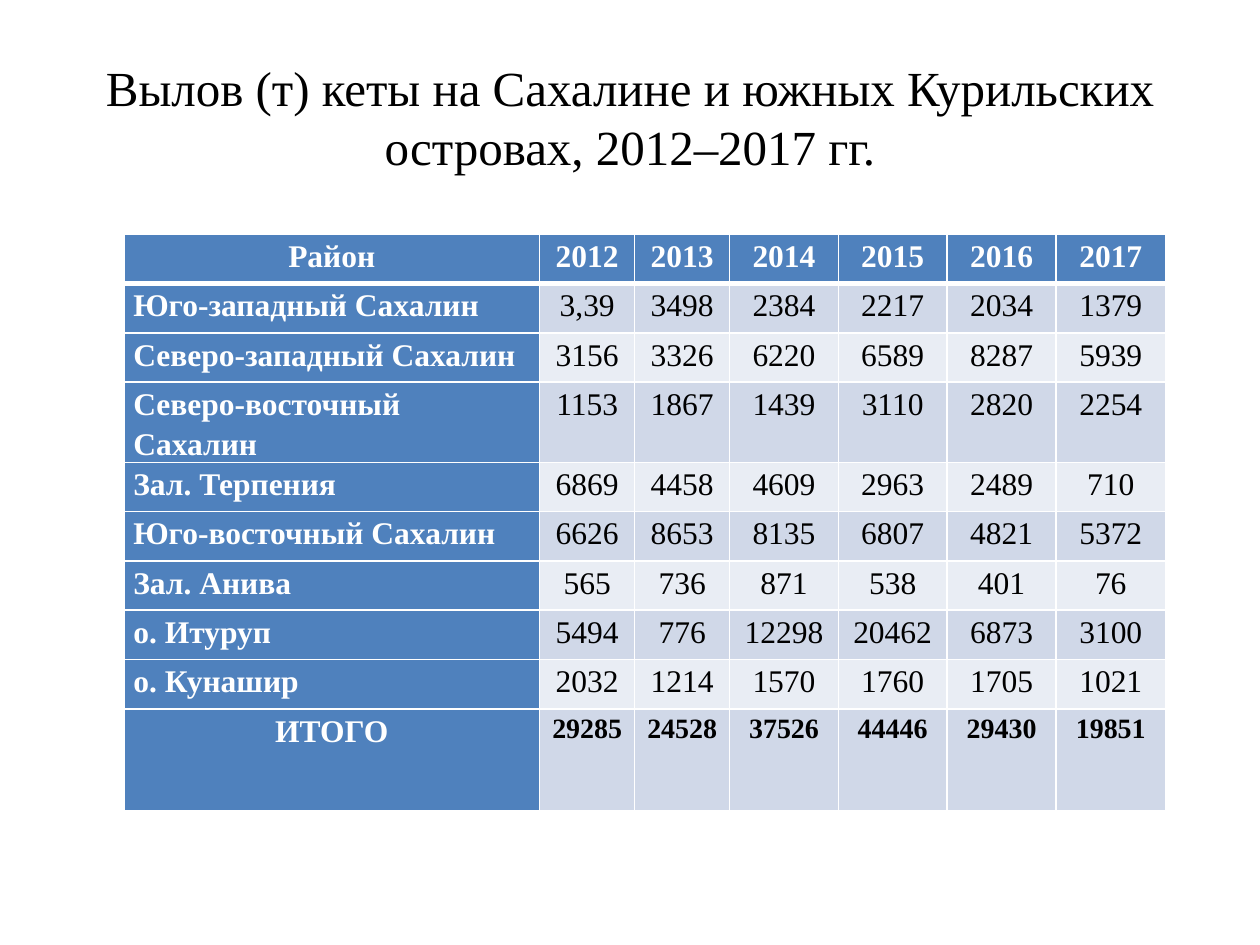
from typing import NamedTuple

from lxml.etree import SubElement
from pptx import Presentation
from pptx.dml.color import RGBColor
from pptx.enum.text import MSO_ANCHOR as Anchor, PP_ALIGN as Align
from pptx.oxml.ns import qn
from pptx.util import Emu, Pt

PX = 3810  # EMU in one px, 240 px to the inch
FONT = "Times New Roman"
WHITE = RGBColor(0xFF, 0xFF, 0xFF)
BLACK = RGBColor(0x00, 0x00, 0x00)
BLUE = RGBColor(0x4F, 0x81, 0xBD)
BAND_DARK = RGBColor(0xD0, 0xD8, 0xE8)
BAND_LIGHT = RGBColor(0xE9, 0xED, 0xF4)

TITLE = "Вылов (т) кеты на Сахалине и южных Курильских островах, 2012–2017 гг."
COLUMN_WIDTHS = [792] + [181] * 2 + [207] * 2 + [208] * 2
ROW_HEIGHT, TOTAL_HEIGHT = 94, 194
CELL_MARGIN = 18


class Region(NamedTuple):
    name: str
    catches: list[str]


class TextStyle(NamedTuple):
    size: int
    color: RGBColor
    bold: bool = False


TITLE_STYLE = TextStyle(28, BLACK)
HEAD_STYLE = TextStyle(18, WHITE, True)
VALUE_STYLE = TextStyle(18, BLACK)
TOTAL_STYLE = TextStyle(16, BLACK, True)

REGIONS = [
    Region("Район", ["2012", "2013", "2014", "2015", "2016", "2017"]),
    Region("Юго-западный Сахалин", ["3,39", "3498", "2384", "2217", "2034", "1379"]),
    Region("Северо-западный Сахалин", ["3156", "3326", "6220", "6589", "8287", "5939"]),
    Region("Северо-восточный Сахалин", ["1153", "1867", "1439", "3110", "2820", "2254"]),
    Region("Зал. Терпения", ["6869", "4458", "4609", "2963", "2489", "710"]),
    Region("Юго-восточный Сахалин", ["6626", "8653", "8135", "6807", "4821", "5372"]),
    Region("Зал. Анива", ["565", "736", "871", "538", "401", "76"]),
    Region("о. Итуруп", ["5494", "776", "12298", "20462", "6873", "3100"]),
    Region("о. Кунашир", ["2032", "1214", "1570", "1760", "1705", "1021"]),
    Region("ИТОГО", ["29285", "24528", "37526", "44446", "29430", "19851"]),
]
LAST = len(REGIONS) - 1


def px(length: int) -> Emu:
    return Emu(length * PX)


def add_text(para, text: str, style: TextStyle, align: Align) -> None:
    para.alignment = align
    span = para.add_run()
    span.text = text
    span.font.name = FONT
    span.font.size = Pt(style.size)
    span.font.bold = style.bold
    span.font.color.rgb = style.color


def add_borders(cell, row: int) -> None:
    """White lines, with a thick one between the header and the body."""
    properties = cell._tc.get_or_add_tcPr()
    widths = {"lnL": 1, "lnR": 1, "lnT": 3 if row == 1 else 1, "lnB": 3 if row == 0 else 1}
    for position, (side, width) in enumerate(widths.items()):
        line = SubElement(properties, qn(f"a:{side}"), w=str(Pt(width)))
        fill = SubElement(line, qn("a:solidFill"))
        SubElement(fill, qn("a:srgbClr"), val=str(WHITE))
        properties.insert(position, line)


def fill_cell(cell, row: int, column: int, text: str) -> None:
    is_head = row == 0 or column == 0
    if is_head:
        style, color = HEAD_STYLE, BLUE
    else:
        style = TOTAL_STYLE if row == LAST else VALUE_STYLE
        color = BAND_DARK if row % 2 else BAND_LIGHT
    is_name = column == 0 and 0 < row < LAST

    cell.margin_left = cell.margin_right = px(CELL_MARGIN)
    cell.margin_top = cell.margin_bottom = 0
    cell.vertical_anchor = Anchor.TOP
    cell.fill.solid()
    cell.fill.fore_color.rgb = color
    add_borders(cell, row)
    para = cell.text_frame.paragraphs[0]
    para.line_spacing = 1.15
    add_text(para, text, style, Align.LEFT if is_name else Align.CENTER)


def add_catch_table(page, left: int, top: int) -> None:
    height = ROW_HEIGHT * LAST + TOTAL_HEIGHT
    table = page.shapes.add_table(
        len(REGIONS), len(COLUMN_WIDTHS),
        px(left), px(top), px(sum(COLUMN_WIDTHS)), px(height),
    ).table
    table.first_col = True
    for column, width in enumerate(COLUMN_WIDTHS):
        table.columns[column].width = px(width)
    for row, region in enumerate(REGIONS):
        table.rows[row].height = px(TOTAL_HEIGHT if row == LAST else ROW_HEIGHT)
        for column, text in enumerate([region.name, *region.catches]):
            fill_cell(table.cell(row, column), row, column, text)


def main() -> None:
    deck = Presentation()
    deck.slide_width, deck.slide_height = px(2400), px(1800)
    page = deck.slides.add_slide(deck.slide_layouts[5])

    # Title
    title = page.shapes.title
    title.left, title.top, title.width, title.height = px(120), px(72), px(2160), px(300)
    title.text_frame.vertical_anchor = Anchor.MIDDLE
    add_text(title.text_frame.paragraphs[0], TITLE, TITLE_STYLE, Align.CENTER)

    # Catch by region and year
    add_catch_table(page, 236, 446)

    deck.save("out.pptx")


if __name__ == "__main__":
    main()
